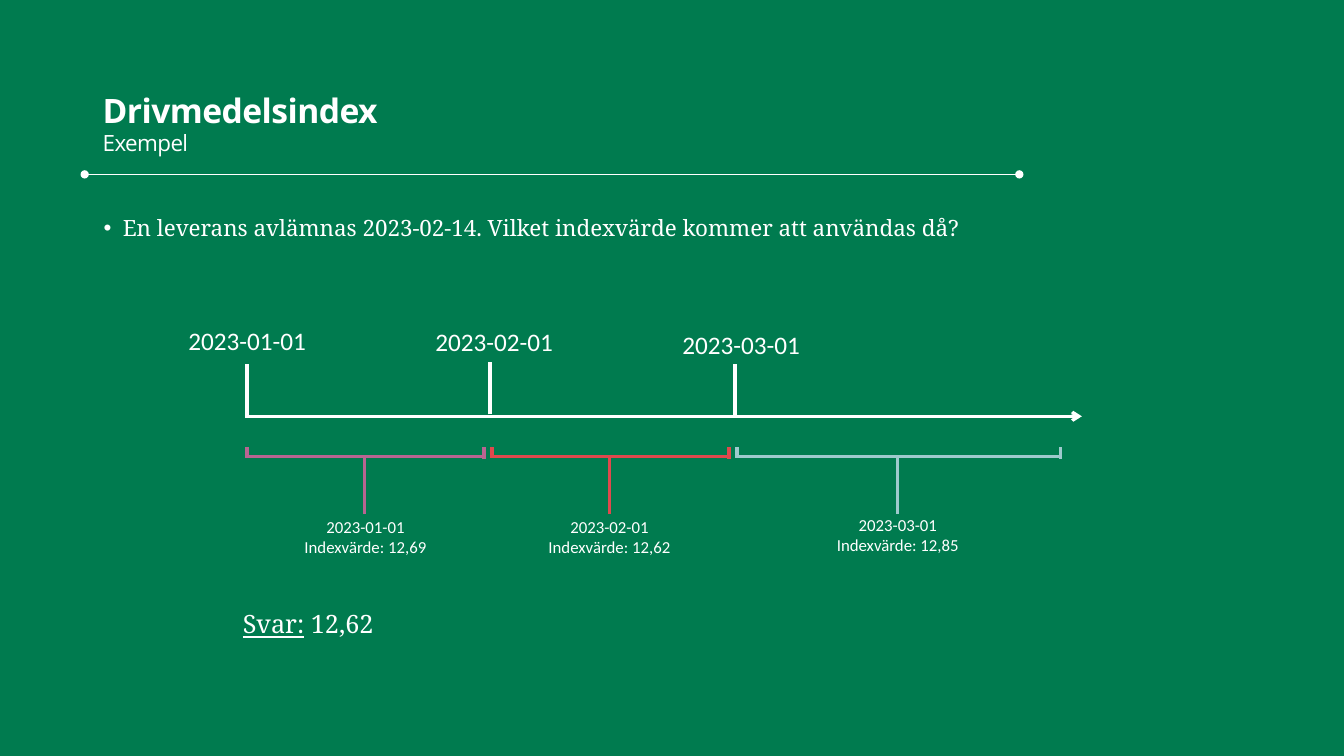
from lxml import etree
from pptx import Presentation
from pptx.dml.color import RGBColor
from pptx.enum.shapes import MSO_CONNECTOR
from pptx.enum.text import MSO_ANCHOR, PP_ALIGN
from pptx.oxml.ns import qn
from pptx.util import Inches, Pt

STRAIGHT = MSO_CONNECTOR.STRAIGHT
TOP = MSO_ANCHOR.TOP
LEFT, CENTER = PP_ALIGN.LEFT, PP_ALIGN.CENTER

WIDTH, HEIGHT = 13.33, 7.5
COLORS = {"green": "007B4F", "white": "FFFFFF", "purple": "B86592",
          "red": "DF494D", "blue": "9ECACD"}

# Timeline grid: months are equal columns, rows are heights on the page
FIRST_MONTH, MONTH = 2.43, 2.43
AXIS_ROW, BRACKET_ROW, STEM_END = 4.13, 4.53, 5.1
TICK, HOOK, STROKE = 0.52, 0.1, 2.25

# Date, label top, tick offset, bracket width, bracket colour, value, value box left and top
PERIODS = [
    ("2023-01-01", 3.18, 0, 2.37, "purple", "12,69", 2.55, 5.08),
    ("2023-02-01", 3.19, -0.02, 2.37, "red", "12,62", 4.97, 5.08),
    ("2023-03-01", 3.22, 0, 3.23, "blue", "12,85", 7.83, 5.06),
]


def color(name):
    return RGBColor.from_string(COLORS[name])


def add_line(page, start, end, line_color="white", width=STROKE, head=None, tail=None):
    line = page.shapes.add_connector(STRAIGHT, *(Inches(v) for v in start + end))
    line.line.color.rgb = color(line_color)
    line.line.width = Pt(width)
    outline = line.line._get_or_add_ln()
    for tag, kind in (("a:headEnd", head), ("a:tailEnd", tail)):
        if kind:
            etree.SubElement(outline, qn(tag)).set("type", kind)
    etree.SubElement(line._element.spPr, qn("a:effectLst"))


def add_text(page, left, top, width, height, lines, size, font="Calibri", align=LEFT):
    box = page.shapes.add_textbox(*(Inches(v) for v in (left, top, width, height)))
    frame = box.text_frame
    frame.word_wrap = True
    frame.vertical_anchor = TOP
    frame.text = "\n".join(lines)
    for para in frame.paragraphs:
        para.alignment = align
        for span in para.runs:
            style_span(span, size, font)
    return frame


def style_span(span, size, font):
    span.font.size = Pt(size)
    span.font.name = font
    span.font.color.rgb = color("white")


def add_heading(page, title, subtitle):
    frame = add_text(page, 0.92, 0.87, 11.5, 0.98, [f"{title}\v{subtitle}"], 24, "Open Sans")
    para = frame.paragraphs[0]
    para.line_spacing = 0.95
    title_span, subtitle_span = para.runs
    title_span.font.bold = True
    subtitle_span.font.size = Pt(16)
    for span in para.runs:
        span.font._element.set("spc", "-40")
    add_line(page, (0.84, 1.73), (10.11, 1.73), width=1, head="oval", tail="oval")


def add_question(page, question):
    frame = add_text(page, 0.92, 2, 11.5, 0.6, [question], 16, "Noto Serif")
    para = frame.paragraphs[0]
    properties = para._p.get_or_add_pPr()
    properties.set("marL", str(Inches(0.2)))
    properties.set("indent", str(Inches(-0.19)))
    etree.SubElement(properties, qn("a:buFont")).set("typeface", "Arial")
    etree.SubElement(properties, qn("a:buChar")).set("char", "•")
    para.line_spacing = 1.3


def add_bracket(page, left, width, bracket_color):
    right, middle = left + width, left + width / 2
    hook_top = BRACKET_ROW - HOOK
    add_line(page, (left, BRACKET_ROW), (right, BRACKET_ROW), bracket_color)
    add_line(page, (left + 0.02, BRACKET_ROW), (left + 0.02, hook_top), bracket_color)
    add_line(page, (right, BRACKET_ROW + 0.02), (right, hook_top), bracket_color)
    add_line(page, (middle, STEM_END), (middle, BRACKET_ROW), bracket_color)


def add_timeline(page):
    add_line(page, (FIRST_MONTH, AXIS_ROW), (10.73, AXIS_ROW), tail="arrow")
    for month, period in enumerate(PERIODS):
        date, label_top, shift, width, bracket_color, value, value_left, value_top = period
        left = FIRST_MONTH + month * MONTH
        tick = left + (0.02 if month == 0 else 0)
        bottom = AXIS_ROW + shift
        add_line(page, (tick, bottom), (tick, bottom - TICK))
        add_text(page, 1.77 + month * 2.45, label_top, 1.49, 0.4, [date], 18)
        add_bracket(page, left, width, bracket_color)
        add_text(page, value_left, value_top, 2.15, 0.5,
                 [date, f"Indexvärde: {value}"], 12, align=CENTER)


def add_answer(page, label, value):
    frame = add_text(page, 2.31, 5.99, 1.7, 0.4, [label], 18, "Noto Serif")
    para = frame.paragraphs[0]
    para.runs[0].font.underline = True
    span = para.add_run()
    span.text = f" {value}"
    style_span(span, 18, "Noto Serif")


def main():
    deck = Presentation()
    deck.slide_width, deck.slide_height = Inches(WIDTH), Inches(HEIGHT)
    page = deck.slides.add_slide(deck.slide_layouts[6])
    page.background.fill.solid()
    page.background.fill.fore_color.rgb = color("green")
    add_heading(page, "Drivmedelsindex", "Exempel")
    add_question(page, "En leverans avlämnas 2023-02-14. "
                       "Vilket indexvärde kommer att användas då?")
    add_timeline(page)
    add_answer(page, "Svar:", "12,62")
    deck.save("out.pptx")


if __name__ == "__main__":
    main()
